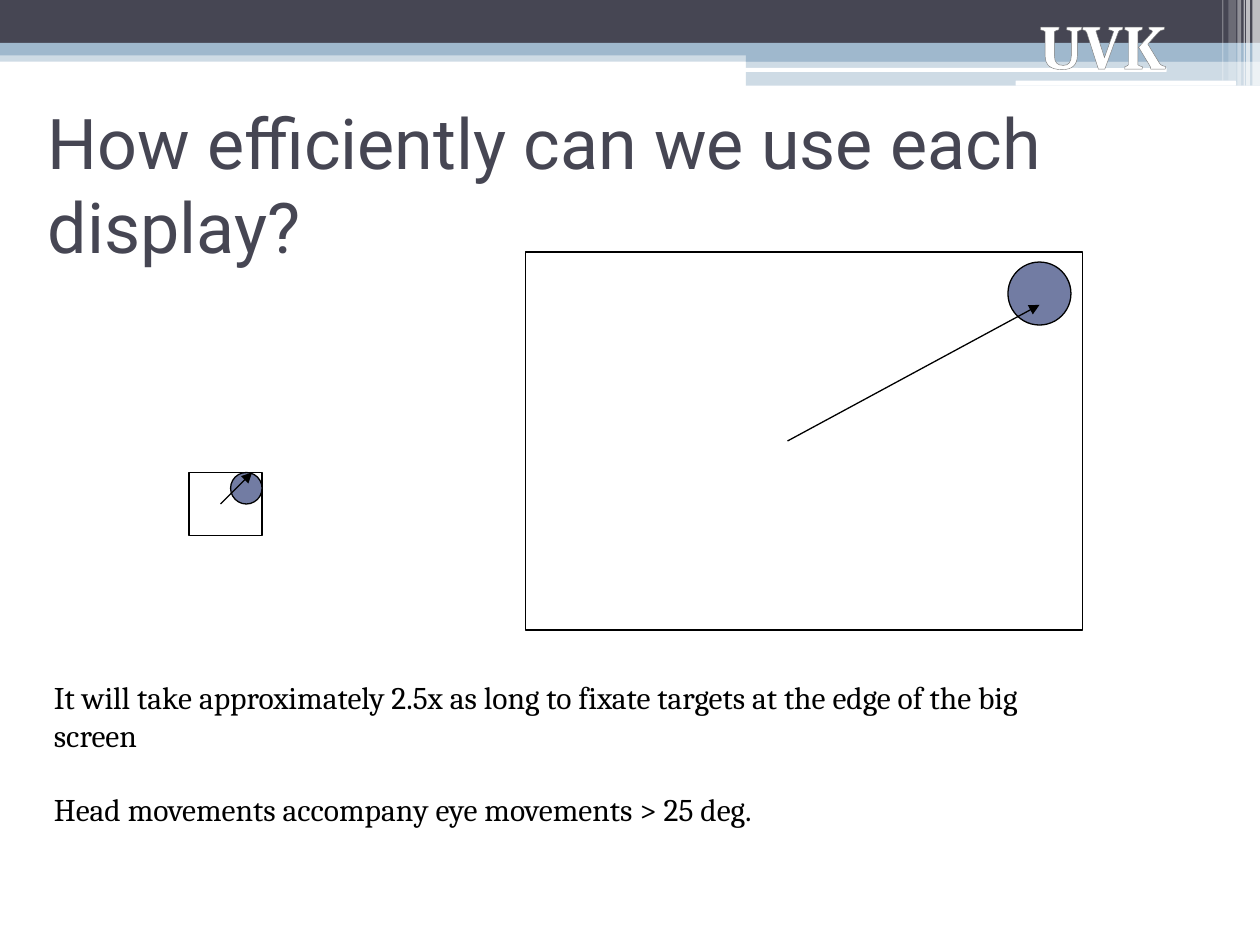
"""Build a slide comparing eye movement on a small and a big display."""
import pptx
import pptx.util
import pptx.dml.color
import pptx.enum.shapes
import pptx.enum.text
import pptx.oxml
import pptx.oxml.ns
from dataclasses import dataclass

PX = 9144
KIND = pptx.enum.shapes.MSO_SHAPE
ALIGN = pptx.enum.text.PP_ALIGN
ANCHOR = pptx.enum.text.MSO_ANCHOR
NS = pptx.oxml.ns.nsdecls("a")


@dataclass(frozen=True)
class Theme:
    dark: str = "464653"
    blue: str = "9FB8CD"
    white: str = "FFFFFF"
    black: str = "000000"
    spot: str = "727CA3"
    edge: str = "7D7D7D"
    head: str = "Roboto"
    body: str = "Cambria"
    title: int = 40
    mark: int = 36
    text: int = 18
    gap: int = 21
    line: float = 0.75


THEME = Theme()

TITLE = "How efficiently can we use each display?"
MARK = "UVK"
NOTES = [
    "It will take approximately 2.5x as long to fixate targets at the edge of the big screen",
    "Head movements accompany eye movements > 25 deg.",
]
BANDS = [
    ((0, 40, 1000, 9), THEME.blue, 50),
    ((0, 0, 1000, 34), THEME.dark, 100),
    ((0, 34, 1000, 10), THEME.blue, 100),
    ((592, 39, 408, 10), THEME.blue, 100),
    ((592, 48, 408, 20), THEME.blue, 50),
]
RULES = [(591, 54, 335, 3), (806, 64, 175, 4)]
STRIPES = [
    (994, 6, 68, 65),
    (989, 3, 68, 65),
    (987, 1, 68, 60),
    (982, 3, 68, 40),
    (975, 6, 64, 20),
    (970, 1, 64, 30),
]
SCREENS = [
    {"frame": (150, 375, 58, 50), "spot": (183, 375, 25, 25), "path": (175, 400, 200, 375)},
    {"frame": (417, 200, 442, 300), "spot": (800, 208, 50, 50), "path": (625, 350, 825, 242)},
]


def emu(box):
    return [n * PX for n in box]


def rgb(tint):
    return pptx.dml.color.RGBColor.from_string(tint)


def style(font, face, size, tint, bold=False):
    font.name, font.size, font.bold = face, pptx.util.Pt(size), bold
    font.color.rgb = rgb(tint)


def draw(slide, kind, box, fill=None, alpha=100, line=None):
    shape = slide.shapes.add_shape(kind, *emu(box))
    shape.shadow.inherit = False
    if fill:
        shape.fill.solid()
        shape.fill.fore_color.rgb = rgb(fill)
        if alpha < 100:
            tint = shape.fill._xPr.find(".//" + pptx.oxml.ns.qn("a:srgbClr"))
            tint.append(pptx.oxml.parse_xml(f'<a:alpha {NS} val="{alpha * 1000}"/>'))
    else:
        shape.fill.background()
    if line:
        shape.line.color.rgb = rgb(line)
        shape.line.width = pptx.util.Pt(THEME.line)
    else:
        shape.line.fill.background()


def arrow(slide, ends):
    link = slide.shapes.add_connector(pptx.enum.shapes.MSO_CONNECTOR.STRAIGHT, *emu(ends))
    link.line.color.rgb = rgb(THEME.black)
    link.line.width = pptx.util.Pt(THEME.line)
    link.line._get_or_add_ln().append(pptx.oxml.parse_xml(f'<a:tailEnd {NS} type="triangle"/>'))
    link._element.spPr.append(pptx.oxml.parse_xml(f"<a:effectLst {NS}/>"))


def write(slide, box, lines):
    frame = slide.shapes.add_textbox(*emu(box)).text_frame
    frame.word_wrap = True
    frame.text = "\n".join(lines)
    return frame.paragraphs


def banner(slide):
    for box, fill, alpha in BANDS:
        draw(slide, KIND.RECTANGLE, box, fill, alpha)
    for box in RULES:
        draw(slide, KIND.ROUNDED_RECTANGLE, box, THEME.white)
    for left, wide, high, alpha in STRIPES:
        draw(slide, KIND.RECTANGLE, (left, 0, wide, high), THEME.white, alpha)
    para = write(slide, (800, 0, 150, 71), [MARK])[0]
    para.alignment = ALIGN.CENTER
    run = para.runs[0]
    style(run.font, THEME.body, THEME.mark, THEME.white, True)
    edge = f'<a:ln {NS} w="10541"><a:solidFill><a:srgbClr val="{THEME.edge}"/></a:solidFill></a:ln>'
    run._r.get_or_add_rPr().insert(0, pptx.oxml.parse_xml(edge))


def heading(slide):
    title = slide.shapes.title
    title.left, title.top, title.width, title.height = emu((28, -73, 945, 303))
    frame = title.text_frame
    frame.text = TITLE
    frame.auto_size = pptx.enum.text.MSO_AUTO_SIZE.NONE
    frame.vertical_anchor = ANCHOR.BOTTOM
    frame.margin_bottom = 18 * PX
    para = frame.paragraphs[0]
    para.alignment = ALIGN.LEFT
    style(para.font, THEME.head, THEME.title, THEME.dark)


def main():
    deck = pptx.Presentation()
    deck.slide_width, deck.slide_height = emu((1000, 750))
    slide = deck.slides.add_slide(deck.slide_layouts[5])
    banner(slide)
    heading(slide)
    for screen in SCREENS:
        draw(slide, KIND.RECTANGLE, screen["frame"], line=THEME.black)
    for row, para in enumerate(write(slide, (33, 533, 833, 170), NOTES)):
        style(para.font, THEME.body, THEME.text, THEME.black)
        para.space_before = pptx.util.Pt(THEME.gap * row)
    for screen in SCREENS:
        draw(slide, KIND.OVAL, screen["spot"], THEME.spot, line=THEME.black)
    for screen in SCREENS:
        arrow(slide, screen["path"])
    deck.save("out.pptx")


if __name__ == "__main__":
    main()
